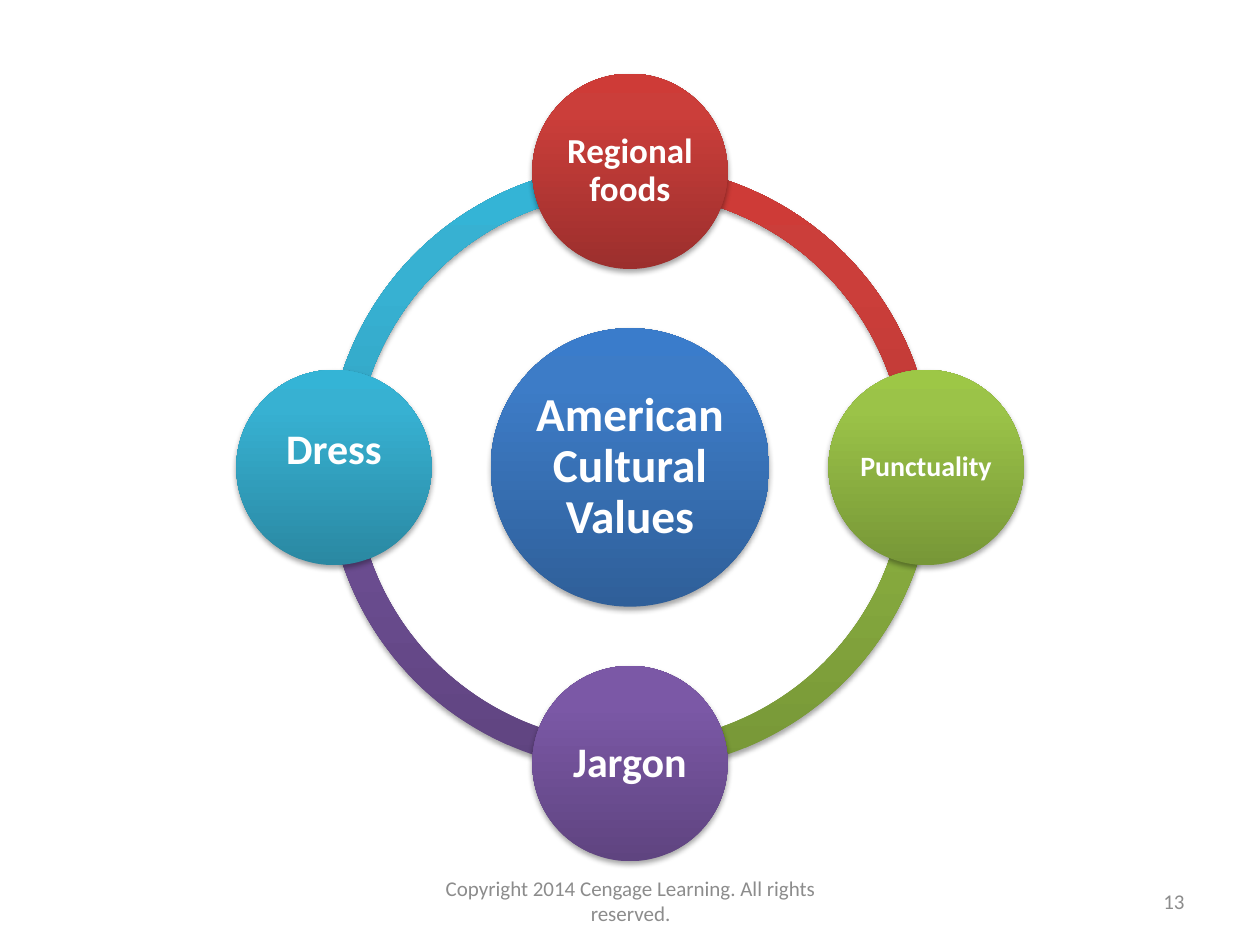
"""Build the American Cultural Values radial cycle slide."""
import copy
import math

from lxml import etree
from pptx import Presentation
from pptx import util as u
from pptx.dml.color import RGBColor
from pptx.enum import shapes, text
from pptx.oxml import ns

WHITE = RGBColor(0xFF, 0xFF, 0xFF)
GREY = RGBColor(0x8C, 0x8C, 0x8C)
BLUE = ("2F5F99", "3D7CC7", "3A7CCB")
RED = ("9C2F2D", "CB3E3A", "CE3B37")
GREEN = ("779737", "9BC348", "9DC746")
PURPLE = ("5F4480", "7B58A6", "7C57A8")
TEAL = ("2A88A2", "37B1D2", "34B4D6")
STOPS = (0, 0.8, 1)

HUB = ("American Cultural Values", 27, BLUE)
VALUES = [
    ("Regional foods", 20, RED, 0),
    ("Punctuality", 16, GREEN, 0),
    ("Jargon", 24, PURPLE, 0),
    ("Dress", 24, TEAL, 0.27),
]
FOOTERS = [
    ("13", 7.17, 2.33, text.PP_ALIGN.RIGHT),
    ("Copyright 2014 Cengage Learning. All rights reserved.", 3.42, 3.17, text.PP_ALIGN.CENTER),
]

CENTER_X, CENTER_Y = 5, 3.71
ORBIT = 2.35
RING_SIZE, HUB_SIZE, VALUE_SIZE = 4.81, 2.21, 1.55
RING_THICKNESS = 0.046
QUARTER = 54
INSET = 0.02


def add_shadow(shape):
    shape.shadow.inherit = False
    effects = shape._element.spPr.find(ns.qn("a:effectLst"))
    outer = etree.SubElement(effects, ns.qn("a:outerShdw"), blurRad="40000",
                             dist="23000", dir="5400000", rotWithShape="0")
    black = etree.SubElement(outer, ns.qn("a:srgbClr"), val="000000")
    etree.SubElement(black, ns.qn("a:alpha"), val="35000")


def add_shaded(slide, kind, x, y, size, shades):
    shape = slide.shapes.add_shape(kind, u.Inches(x - size / 2), u.Inches(y - size / 2),
                                   u.Inches(size), u.Inches(size))
    shape.fill.gradient()
    shape.fill.gradient_angle = 90
    stop_list = shape._element.spPr.find(".//" + ns.qn("a:gsLst"))
    stop_list.append(copy.deepcopy(stop_list[-1]))
    for stop, position, shade in zip(shape.fill.gradient_stops, STOPS, shades):
        stop.position = position
        stop.color.rgb = RGBColor.from_string(shade)
    shape.line.fill.background()
    add_shadow(shape)
    return shape


def write(frame, words, size, color, align, bold=False):
    frame.word_wrap = True
    frame.vertical_anchor = text.MSO_ANCHOR.MIDDLE
    paragraph = frame.paragraphs[0]
    paragraph.text = words
    paragraph.alignment = align
    font = paragraph.font
    font.name, font.size, font.bold = "Calibri", u.Pt(size), bold
    font.color.rgb = color
    return paragraph


def add_circle(slide, x, y, diameter, words, size, shades, lift=0):
    circle = add_shaded(slide, shapes.MSO_SHAPE.OVAL, x, y, diameter, shades)
    frame = circle.text_frame
    frame.margin_left = frame.margin_right = frame.margin_top = u.Inches(INSET)
    frame.margin_bottom = u.Inches(INSET + lift)
    label = write(frame, words, size, WHITE, text.PP_ALIGN.CENTER, bold=True)
    label.line_spacing = 0.9


def main():
    deck = Presentation()
    deck.slide_width, deck.slide_height = u.Inches(10), u.Inches(7.5)
    slide = deck.slides.add_slide(deck.slide_layouts[6])

    for index, (_, _, shades, _) in reversed(list(enumerate(VALUES))):
        arc = add_shaded(slide, shapes.MSO_SHAPE.BLOCK_ARC, CENTER_X, CENTER_Y, RING_SIZE, shades)
        start = (index + 3) % 4 * QUARTER
        arc.adjustments[0] = start
        arc.adjustments[1] = (start + QUARTER) % (4 * QUARTER)
        arc.adjustments[2] = RING_THICKNESS

    add_circle(slide, CENTER_X, CENTER_Y, HUB_SIZE, *HUB)
    for index, value in enumerate(VALUES):
        angle = math.radians(90 * index - 90)
        add_circle(slide, CENTER_X + ORBIT * math.cos(angle),
                   CENTER_Y + ORBIT * math.sin(angle), VALUE_SIZE, *value)

    for words, left, width, align in FOOTERS:
        footer = slide.shapes.add_textbox(u.Inches(left), u.Inches(6.95),
                                          u.Inches(width), u.Inches(0.4))
        write(footer.text_frame, words, 12, GREY, align)

    deck.save("out.pptx")


if __name__ == "__main__":
    main()
